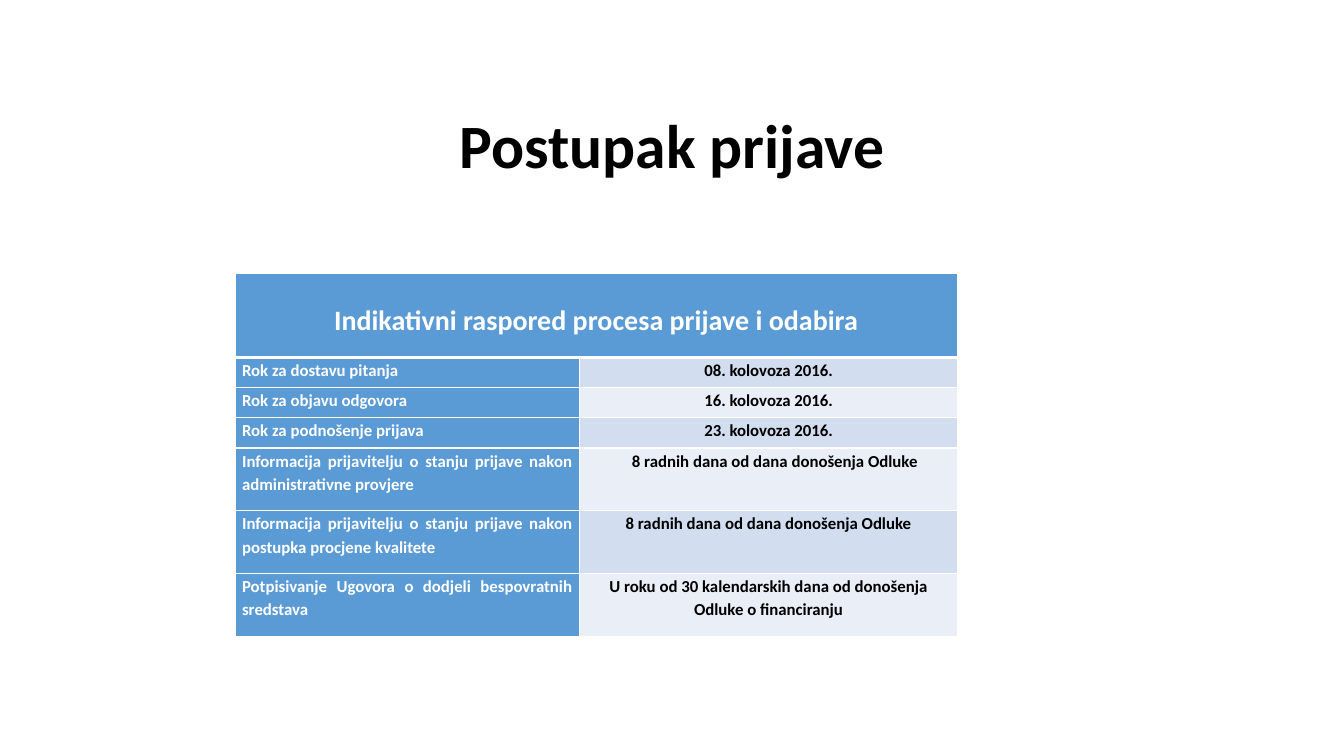
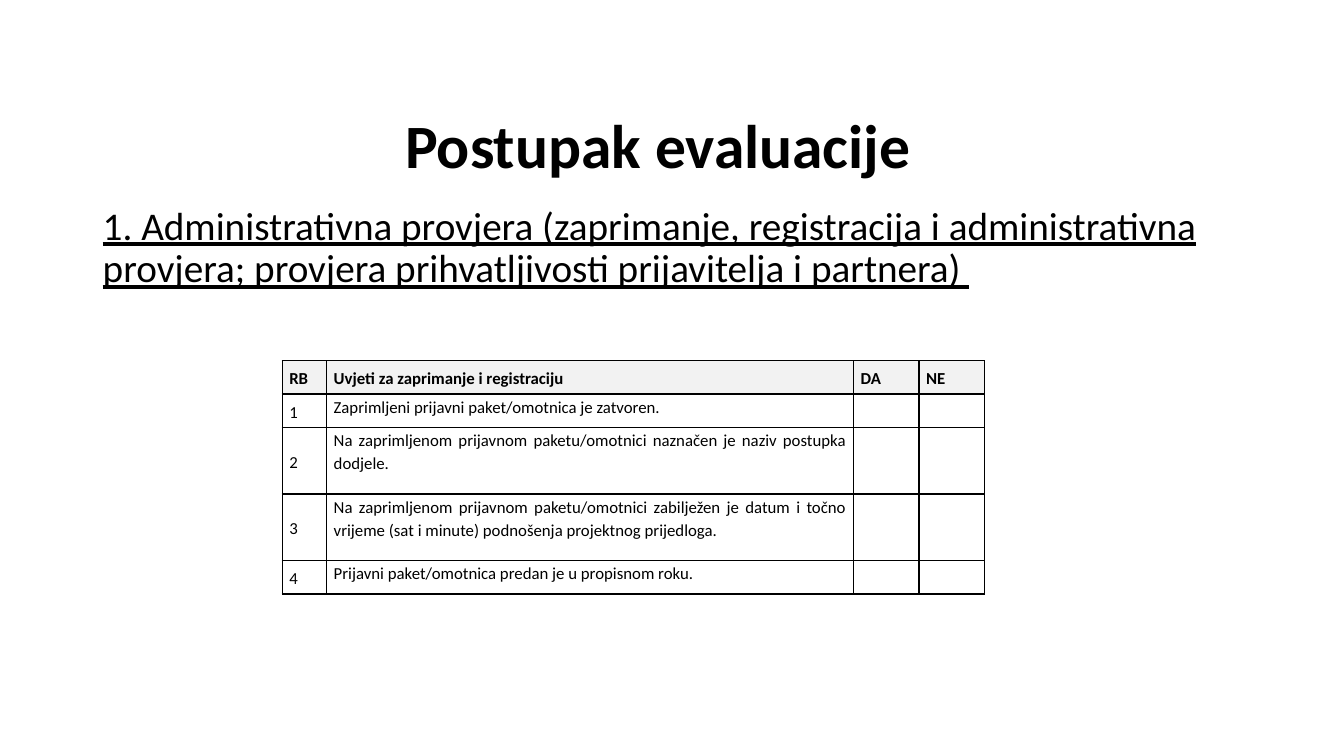
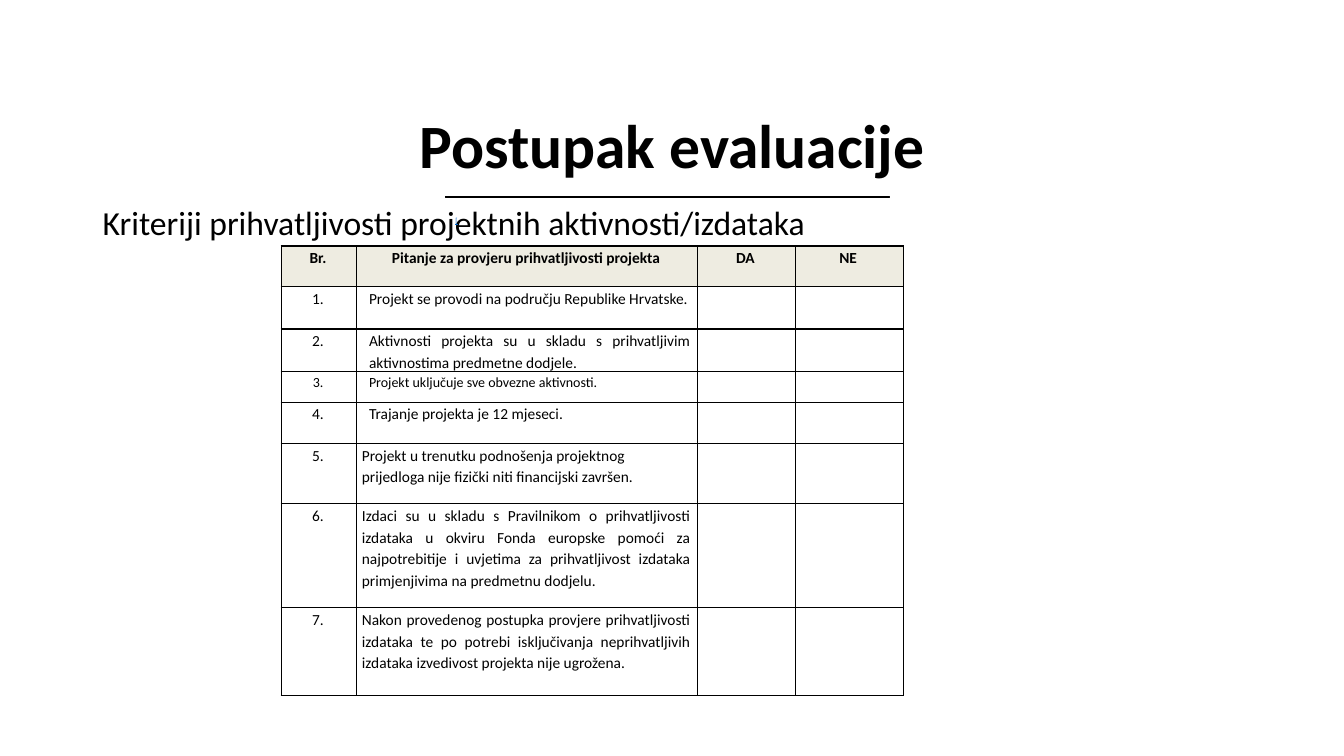
"""Three slides on the application and evaluation procedure."""
from lxml import etree
from pptx import Presentation
from pptx import util as u
from pptx.dml import color
from pptx.enum import shapes, text
from pptx.oxml import ns

COLORS = {
    "ink": "000000",
    "white": "FFFFFF",
    "blue": "5B9BD5",
    "band_dark": "D2DEEF",
    "band_light": "EAEFF7",
    "grey": "F2F2F2",
    "sand": "EEECE1",
    "link": "0563C1",
}
FONT = "Calibri"
LEFT, WIDTH = 2.34, 29.21
CENTER, JUSTIFY = text.PP_ALIGN.CENTER, text.PP_ALIGN.JUSTIFY
TOP, MIDDLE, BOTTOM = text.MSO_ANCHOR.TOP, text.MSO_ANCHOR.MIDDLE, text.MSO_ANCHOR.BOTTOM

SCHEDULE = [
    ["Indikativni raspored procesa prijave i odabira", ""],
    ["Rok za dostavu pitanja", "08. kolovoza 2016."],
    ["Rok za objavu odgovora", "16. kolovoza 2016."],
    ["Rok za podnošenje prijava", "23. kolovoza 2016."],
    ["Informacija prijavitelju o stanju prijave nakon administrativne provjere",
     "8 radnih dana od dana donošenja Odluke"],
    ["Informacija prijavitelju o stanju prijave nakon postupka procjene kvalitete",
     "8 radnih dana od dana donošenja Odluke"],
    ["Potpisivanje Ugovora o dodjeli bespovratnih sredstava",
     "U roku od 30 kalendarskih dana od donošenja Odluke o financiranju"],
]
REGISTRATION = [
    ["RB", "Uvjeti za zaprimanje i registraciju", "DA", "NE"],
    ["1", "Zaprimljeni prijavni paket/omotnica je zatvoren.", "", ""],
    ["2", "Na zaprimljenom prijavnom paketu/omotnici naznačen je naziv postupka dodjele.", "", ""],
    ["3", "Na zaprimljenom prijavnom paketu/omotnici zabilježen je datum i točno vrijeme "
          "(sat i minute) podnošenja projektnog prijedloga.", "", ""],
    ["4", "Prijavni paket/omotnica predan je u propisnom roku.", "", ""],
]
ELIGIBILITY = [
    ["Br.", "Pitanje za provjeru prihvatljivosti projekta", "DA", "NE"],
    ["1.", "Projekt se provodi na području Republike Hrvatske.", "", ""],
    ["2.", "Aktivnosti projekta su u skladu s prihvatljivim aktivnostima predmetne dodjele.", "", ""],
    ["3.", "Projekt uključuje sve obvezne aktivnosti.", "", ""],
    ["4.", "Trajanje projekta je 12 mjeseci.", "", ""],
    ["5.", "Projekt u trenutku podnošenja projektnog prijedloga nije fizički niti "
           "financijski završen.", "", ""],
    ["6.", "Izdaci su u skladu s Pravilnikom o prihvatljivosti izdataka u okviru Fonda europske "
           "pomoći za najpotrebitije i uvjetima za prihvatljivost izdataka primjenjivima na "
           "predmetnu dodjelu.", "", ""],
    ["7.", "Nakon provedenog postupka provjere prihvatljivosti izdataka te po potrebi "
           "isključivanja neprihvatljivih izdataka izvedivost projekta nije ugrožena.", "", ""],
]


def rgb(name):
    """Return the named colour."""
    return color.RGBColor.from_string(COLORS[name])


def assign(target, values):
    """Set each attribute of the target from a dict."""
    for name, value in values.items():
        setattr(target, name, value)


def write(frame, words, ink="ink", paragraph=None, **font):
    """Write one formatted paragraph and return its run."""
    line = frame.paragraphs[0]
    assign(line, {"line_spacing": 0.9, **(paragraph or {})})
    run = line.add_run()
    run.text = words
    font["size"] = u.Pt(font["size"])
    assign(run.font, {"name": FONT, **font})
    run.font.color.rgb = rgb(ink)
    return run


def add_titled_slide(deck, words, indent=None):
    """Add a slide with a bold title, centred unless an indent is given."""
    slide = deck.slides.add_slide(deck.slide_layouts[5])
    title = slide.shapes.title
    assign(title, {"left": u.Cm(LEFT), "top": u.Cm(1.02),
                   "width": u.Cm(WIDTH), "height": u.Cm(3.68)})
    assign(title.text_frame, {"vertical_anchor": BOTTOM, "word_wrap": True,
                              "auto_size": text.MSO_AUTO_SIZE.NONE})
    align = CENTER
    if indent:
        title.text_frame.margin_left = u.Cm(indent)
        align = text.PP_ALIGN.LEFT
    write(title.text_frame, words, paragraph={"alignment": align}, size=44, bold=True)
    return slide


def add_subtitle(slide, words, **font):
    """Add the line of text under the title."""
    box = slide.shapes.add_textbox(u.Cm(LEFT), u.Cm(5.08), u.Cm(WIDTH), u.Cm(2.8))
    box.text_frame.word_wrap = True
    write(box.text_frame, words, **font)


def add_rule(slide):
    """Add the thin black rule under the title."""
    rule = slide.shapes.add_shape(shapes.MSO_SHAPE.RECTANGLE, u.Cm(11.23), u.Cm(4.96),
                                  u.Cm(11.18), u.Cm(0.03))
    rule.shadow.inherit = False
    rule.fill.solid()
    rule.fill.fore_color.rgb = rgb("ink")
    rule.line.color.rgb = rgb("ink")
    rule.line.width = u.Pt(0.75)


def add_footnote_mark(slide):
    """Add the small raised footnote bracket."""
    box = slide.shapes.add_textbox(u.Cm(11.23), u.Cm(5.28), u.Cm(0.58), u.Cm(0.64))
    assign(box.text_frame, {"word_wrap": False, "vertical_anchor": MIDDLE})
    mark = write(box.text_frame, "[", "link", {"line_spacing": 1.0}, size=9, underline=True)
    mark.font._element.set("baseline", "30000")


def set_borders(cell, name, bottom=1):
    """Draw the four borders of a cell."""
    props = cell._tc.get_or_add_tcPr()
    for place, (side, width) in enumerate(zip("LRTB", (1, 1, 1, bottom))):
        edge = etree.Element(ns.qn(f"a:ln{side}"), w=str(u.Pt(width)))
        fill = etree.SubElement(edge, ns.qn("a:solidFill"))
        etree.SubElement(fill, ns.qn("a:srgbClr"), val=COLORS[name])
        props.insert(place, edge)


def add_grid(slide, corner, widths, heights, rows, look, border):
    """Add a table whose cells are formatted by the look function."""
    left, top = corner
    table = slide.shapes.add_table(len(rows), len(widths), u.Cm(left), u.Cm(top),
                                   u.Cm(sum(widths)), u.Cm(sum(heights))).table
    assign(table, {"first_row": False, "horz_banding": False})
    for column, width in zip(table.columns, widths):
        column.width = u.Cm(width)
    for row, height in zip(table.rows, heights):
        row.height = u.Cm(height)
    for r, row in enumerate(rows):
        for c, words in enumerate(row):
            style = {"size": 12, "bold": r == 0, "ink": "ink", "fill": "white", "align": JUSTIFY,
                     "anchor": TOP, "left": 0.18, "top": 0, "bottom": 1, **look(r, c)}
            cell = table.cell(r, c)
            assign(cell, {"margin_left": u.Cm(style["left"]), "margin_right": u.Cm(0.18),
                          "margin_top": u.Cm(style["top"]), "margin_bottom": 0,
                          "vertical_anchor": style["anchor"]})
            cell.fill.solid()
            cell.fill.fore_color.rgb = rgb(style["fill"])
            set_borders(cell, border, style["bottom"])
            if words:
                write(cell.text_frame, words, style["ink"],
                      {"alignment": style["align"], "line_spacing": 1.15},
                      size=style["size"], bold=style["bold"])
    return table


def schedule_look(r, c):
    """Format the schedule: blue labels, banded dates."""
    if r == 0:
        return {"size": 20, "ink": "white", "fill": "blue", "align": CENTER,
                "top": 0.64, "bottom": 3}
    if c == 0:
        return {"bold": True, "ink": "white", "fill": "blue"}
    return {"bold": True, "fill": "band_dark" if r % 2 else "band_light",
            "align": CENTER, "left": 0.5 if r == 4 else 0.18}


def registration_look(r, c):
    """Format the registration checklist."""
    return {"fill": "white" if r else "grey", "anchor": TOP if r and c == 1 else MIDDLE}


def eligibility_look(r, c):
    """Format the eligibility checklist."""
    style = {"size": 10 if r == 3 else 11, "left": 0.13, "fill": "white" if r else "sand"}
    if r == 0 or c == 0:
        style["align"] = CENTER
    elif r < 5:
        style["left"] = 0.31
    elif r == 5:
        style["align"] = text.PP_ALIGN.LEFT
    return style


def main():
    """Build and save the deck."""
    deck = Presentation()
    assign(deck, {"slide_width": u.Cm(33.87), "slide_height": u.Cm(19.05)})

    application = add_titled_slide(deck, "Postupak prijave")
    schedule = add_grid(application, (5.92, 6.88), [8.69, 9.52], [2.13] + [0.76] * 3 + [1.58] * 3,
                        SCHEDULE, schedule_look, "white")
    schedule.cell(0, 0).merge(schedule.cell(0, 1))

    registration = add_titled_slide(deck, "Postupak evaluacije", indent=7.87)
    add_subtitle(registration, "1. Administrativna provjera (zaprimanje, registracija i "
                 "administrativna provjera; provjera prihvatljivosti prijavitelja i partnera) ",
                 size=28, underline=True)
    add_grid(registration, (7.11, 9.09), [1.12, 13.28, 1.65, 1.65], [0.84, 0.84, 1.68, 1.68, 0.84],
             REGISTRATION, registration_look, "ink")

    eligibility = add_titled_slide(deck, "Postupak evaluacije")
    add_subtitle(eligibility, "Kriteriji prihvatljivosti projektnih aktivnosti/izdataka", size=24)
    add_rule(eligibility)
    add_footnote_mark(eligibility)
    add_grid(eligibility, (7.09, 6.2), [1.9, 8.59, 2.46, 2.72],
             [1.02, 1.07, 1.08, 0.76, 1.04, 1.52, 2.62, 2.21],
             ELIGIBILITY, eligibility_look, "ink")

    deck.save("out.pptx")


if __name__ == "__main__":
    main()
